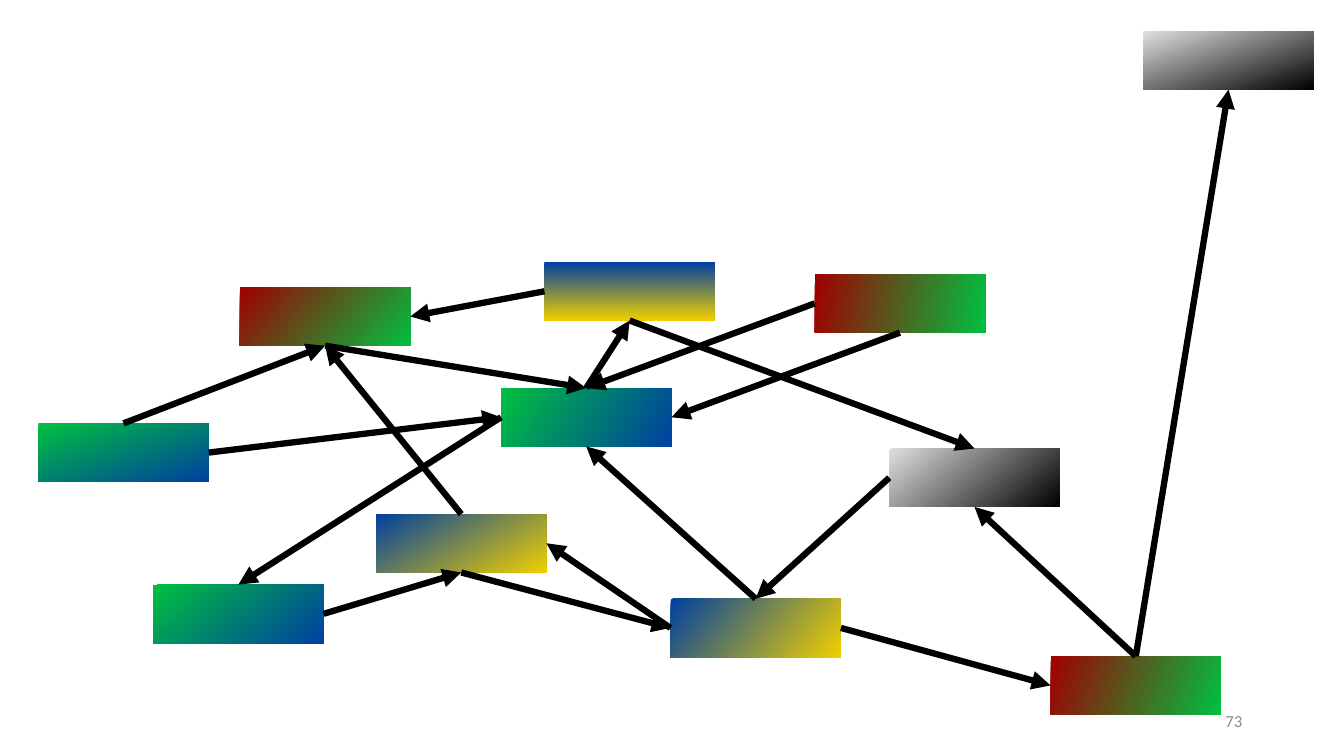
from lxml import etree
from pptx import Presentation
from pptx.dml.color import RGBColor
from pptx.enum.shapes import MSO_CONNECTOR, MSO_SHAPE
from pptx.enum.text import MSO_ANCHOR, PP_ALIGN
from pptx.oxml.ns import qn
from pptx.util import Inches, Pt

RECT = MSO_SHAPE.RECTANGLE
LINE = MSO_CONNECTOR.STRAIGHT
MIDDLE = MSO_ANCHOR.MIDDLE
RIGHT = PP_ALIGN.RIGHT

WIDE, HIGH = Inches(13.33), Inches(7.5)
COLORS = {
    "red": "A00000", "green": "00C040", "blue": "0040A0", "gold": "F0D000",
    "silver": "E0E0E0", "black": "000000", "gray": "8C8C8C",
}
TOP, LEFT, BOTTOM, EAST = range(4)

# Sizes and places are percentages of the slide's width and height.
BOX = (12.68, 7.73)
# name: left, top, first colour, last colour, clockwise angle
NODES = {
    "ruby": (17.85, 38, "red", "green", 40),
    "leaf": (11.4, 77.33, "green", "blue", 50),
    "hub": (37.28, 51.33, "green", "blue", 30),
    "base": (78.17, 86.8, "red", "green", 20),
    "steel": (66.17, 59.33, "silver", "black", 50),
    "west": (2.85, 56, "green", "blue", 70),
    "peak": (85.07, 4.13, "silver", "black", 70),
    "sand": (27.98, 68, "blue", "gold", 60),
    "crown": (40.51, 34.67, "blue", "gold", 90),
    "dune": (49.89, 79.2, "blue", "gold", 40),
    "rose": (60.62, 36.27, "red", "green", 10),
}
# start box, its side, end box, its side
LINKS = [
    ("ruby", BOTTOM, "hub", TOP),
    ("crown", BOTTOM, "steel", TOP),
    ("hub", LEFT, "leaf", TOP),
    ("leaf", EAST, "sand", BOTTOM),
    ("west", EAST, "hub", LEFT),
    ("west", TOP, "ruby", BOTTOM),
    ("dune", TOP, "hub", BOTTOM),
    ("sand", TOP, "ruby", BOTTOM),
    ("rose", BOTTOM, "hub", EAST),
    ("base", TOP, "peak", BOTTOM),
    ("dune", LEFT, "sand", EAST),
    ("sand", BOTTOM, "dune", LEFT),
    ("crown", LEFT, "ruby", EAST),
    ("rose", LEFT, "hub", TOP),
    ("steel", LEFT, "dune", TOP),
    ("hub", TOP, "crown", BOTTOM),
    ("base", TOP, "steel", BOTTOM),
    ("dune", EAST, "base", LEFT),
]


def color(name):
    return RGBColor.from_string(COLORS[name])


def place(left, top, width, height):
    """Turn percentages of the slide into lengths."""
    return [round(share * full / 100) for share, full in
            zip((left, top, width, height), (WIDE, HIGH, WIDE, HIGH))]


def apply(target, values):
    for name, value in values.items():
        setattr(target, name, value)


def add_node(slide, left, top, first, last, angle):
    node = slide.shapes.add_shape(RECT, *place(left, top, *BOX))
    node.shadow.inherit = False
    node.line.fill.background()
    node.fill.gradient()
    node.fill.gradient_angle = 360 - angle
    for stop, name in zip(node.fill.gradient_stops, (first, last)):
        stop.color.rgb = color(name)
    return node


def add_link(slide, start, side, end, goal):
    link = slide.shapes.add_connector(LINE, 0, 0, 0, 0)
    link.begin_connect(start, side)
    link.end_connect(end, goal)
    link.line.width = Pt(4.5)
    link.line.color.rgb = color("black")
    etree.SubElement(link.line._get_or_add_ln(), qn("a:tailEnd"), type="triangle")
    etree.SubElement(link._element.spPr, qn("a:effectLst"))


def add_label(slide, text, spot):
    frame = slide.shapes.add_textbox(*place(*spot)).text_frame
    apply(frame, {"word_wrap": True, "vertical_anchor": MIDDLE, "text": text})
    line = frame.paragraphs[0]
    line.alignment = RIGHT
    apply(line.font, {"name": "Calibri", "size": Pt(12)})
    line.font.color.rgb = color("gray")


def main():
    deck = Presentation()
    apply(deck, {"slide_width": WIDE, "slide_height": HIGH})
    slide = deck.slides.add_slide(deck.slide_layouts[6])
    add_label(slide, "73", (70.67, 92.67, 22.5, 5.33))
    nodes = {name: add_node(slide, *node) for name, node in NODES.items()}
    for start, side, end, goal in LINKS:
        add_link(slide, nodes[start], side, nodes[end], goal)
    deck.save("out.pptx")


if __name__ == "__main__":
    main()
